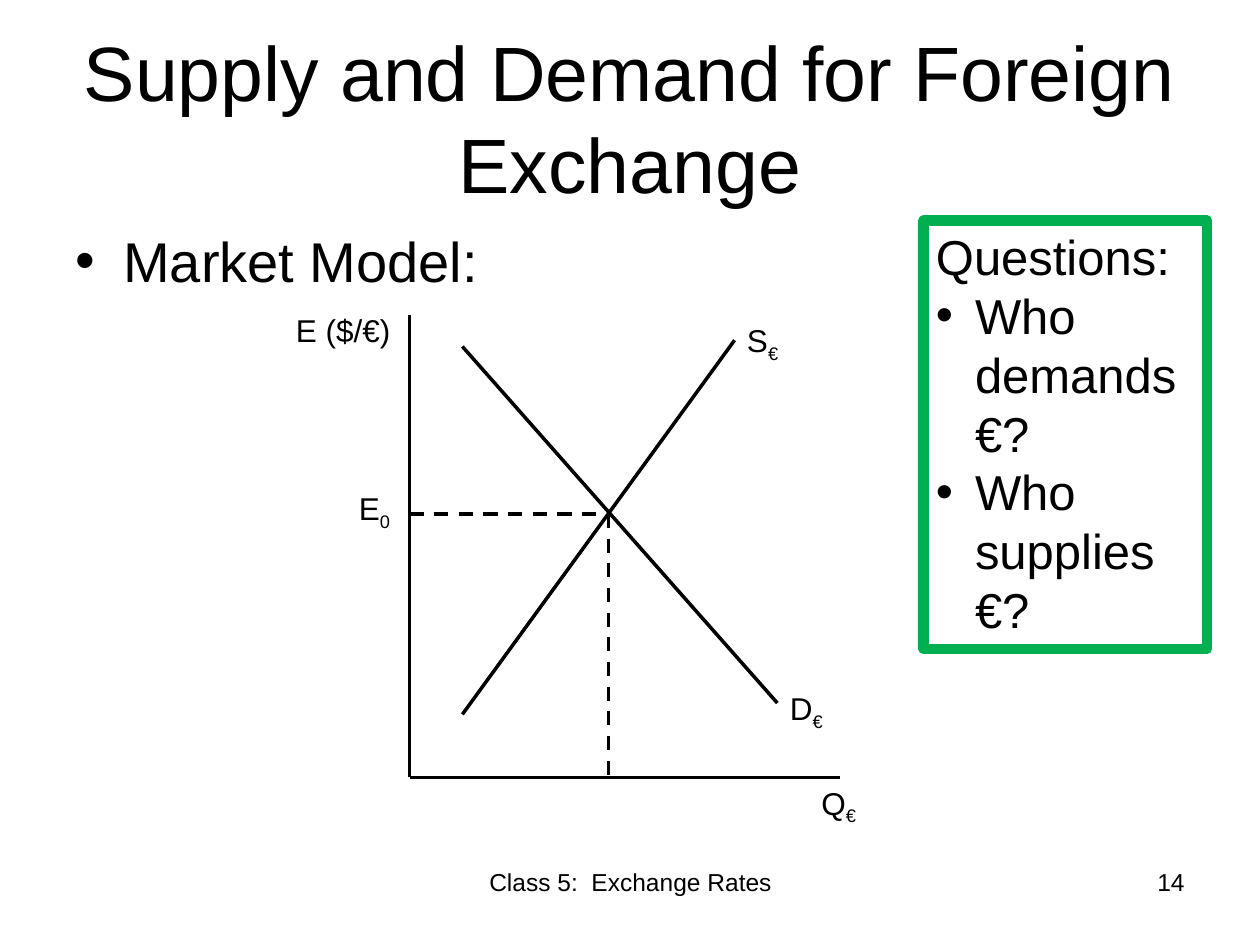
from pptx import Presentation
from pptx.dml.color import RGBColor
from pptx.enum.dml import MSO_LINE_DASH_STYLE as Dash
from pptx.enum.shapes import MSO_CONNECTOR as Connector, MSO_SHAPE as Shape
from pptx.enum.text import MSO_ANCHOR as Anchor, PP_ALIGN as Align
from pptx.oxml.ns import qn
from pptx.util import Inches, Pt
from lxml.etree import SubElement

BLACK = "000000"
GREEN = "00B050"


def color(value):
    return RGBColor.from_string(value)


def style_span(span, size):
    span.font.name = "Arial"
    span.font.size = Pt(size)
    span.font.color.rgb = color(BLACK)


def style_para(para, size, align=Align.LEFT):
    para.alignment = align
    for span in para.runs:
        style_span(span, size)


def add_bullet(para, indent):
    props = para._p.get_or_add_pPr()
    props.set("marL", str(Inches(indent)))
    props.set("indent", str(-Inches(indent)))
    SubElement(props, qn("a:buFont"), typeface="Arial")
    SubElement(props, qn("a:buChar"), char="•")


def add_text(page, box, text, size, align=Align.LEFT, anchor=Anchor.TOP):
    shape = page.shapes.add_textbox(*map(Inches, box))
    frame = shape.text_frame
    frame.word_wrap = True
    frame.vertical_anchor = anchor
    frame.text = text
    para = frame.paragraphs[0]
    style_para(para, size, align)
    return para


def add_label(page, box, text, subscript=""):
    para = add_text(page, box, text, 18)
    if subscript:
        span = para.add_run()
        span.text = subscript
        style_span(span, 18)
        span._r.get_or_add_rPr().set("baseline", "-25000")


def add_line(page, start, end, dashed=False):
    line = page.shapes.add_connector(Connector.STRAIGHT, *map(Inches, start + end))
    line.line.color.rgb = color(BLACK)
    line.line.width = Pt(2)
    if dashed:
        line.line.dash_style = Dash.DASH
    SubElement(line._element.spPr, qn("a:effectLst"))


def add_market_graph(page, box):
    left, top, width, height = box
    right, bottom = left + width, top + height
    balance = (left + 1.58, top + 1.58)

    add_line(page, (left, bottom), (right, bottom))
    add_line(page, (left, bottom), (left, top))
    add_line(page, (left + 2.92, top + 3.08), (left + 0.42, top + 0.25))
    add_line(page, (left + 0.42, top + 3.17), (left + 2.58, top + 0.2))
    add_line(page, (left, balance[1]), balance, dashed=True)
    add_line(page, balance, (balance[0], bottom), dashed=True)

    add_label(page, (left - 1, top - 0.08, 1.33, 0.4), "E ($/€)")
    labels = [
        (2.58, 0, "S", "€"),
        (2.92, 2.92, "D", "€"),
        (3.17, height, "Q", "€"),
        (-0.5, 1.33, "E", "0"),
    ]
    for across, down, text, subscript in labels:
        add_label(page, (left + across, top + down, 0.75, 0.4), text, subscript)


def add_questions(page, box):
    panel = page.shapes.add_shape(Shape.RECTANGLE, *map(Inches, box))
    panel.shadow.inherit = False
    panel.fill.background()
    panel.line.color.rgb = color(GREEN)
    panel.line.width = Pt(6)
    frame = panel.text_frame
    frame.word_wrap = True
    frame.vertical_anchor = Anchor.TOP
    frame.text = "Questions:\nWho demands €?\nWho supplies €?"
    for para in frame.paragraphs:
        style_para(para, 28)
    for para in frame.paragraphs[1:]:
        add_bullet(para, 0.31)


def add_heading(page, box):
    left, top, width, height = box
    add_text(page, (left, top, width, 1.25),
             "Supply and Demand for Foreign Exchange", 44, Align.CENTER, Anchor.MIDDLE)
    topic = add_text(page, (left, top + 1.45, width, height - 1.45), "Market Model:", 32)
    add_bullet(topic, 0.38)


def add_footer(page, box):
    left, top, width, height = box
    add_text(page, (left + 2.92, top, 3.17, height),
             "Class 5:  Exchange Rates", 14, Align.CENTER)
    add_text(page, (left + width - 2.33, top, 2.33, height), "14", 14, Align.RIGHT)


def main():
    deck = Presentation()
    deck.slide_width, deck.slide_height = Inches(10), Inches(7.5)
    page = deck.slides.add_slide(deck.slide_layouts[6])
    add_heading(page, (0.5, 0.3, 9, 2.03))
    add_footer(page, (0.5, 6.83, 9, 0.52))
    add_market_graph(page, (3.25, 2.5, 3.42, 3.67))
    add_questions(page, (7.33, 1.75, 2.25, 3.4))
    deck.save("out.pptx")


if __name__ == "__main__":
    main()
